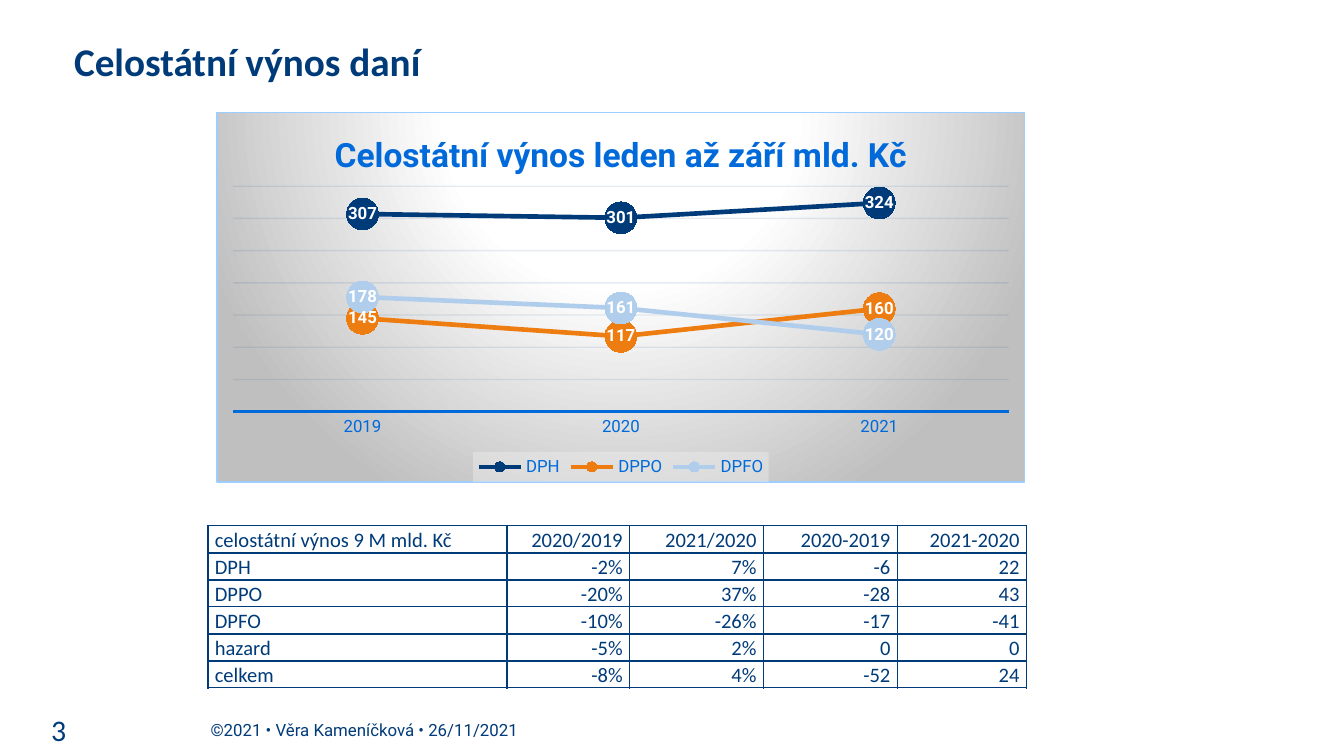
from lxml import etree
from pptx import Presentation
from pptx.chart.data import CategoryChartData
from pptx.dml.color import RGBColor
from pptx.enum.chart import (XL_CHART_TYPE as ChartType, XL_LABEL_POSITION as LabelPos,
                             XL_LEGEND_POSITION as LegendPos, XL_MARKER_STYLE as Marker,
                             XL_TICK_LABEL_POSITION as TickLabel, XL_TICK_MARK as Tick)
from pptx.enum.text import MSO_ANCHOR as Anchor, PP_ALIGN as Align
from pptx.oxml import parse_xml
from pptx.oxml.ns import nsdecls, qn
from pptx.util import Cm, Pt

NAVY = RGBColor(0x00, 0x3B, 0x79)
FOOTER = RGBColor(0x01, 0x3B, 0x79)
BLUE = RGBColor(0x00, 0x6A, 0xDA)
GRID = RGBColor(0x00, 0x44, 0x8C)
ORANGE = RGBColor(0xEE, 0x7D, 0x11)
PALE = RGBColor(0xB0, 0xCE, 0xEC)
BORDER = RGBColor(0x9E, 0xCD, 0xFF)
WHITE = RGBColor(0xFF, 0xFF, 0xFF)
GREY = RGBColor(0xBF, 0xBF, 0xBF)
LEGEND = RGBColor(0xF2, 0xF2, 0xF2)

YEARS = ["2019", "2020", "2021"]
TAXES = [("DPH", (307, 301, 324), NAVY),
         ("DPPO", (145, 117, 160), ORANGE),
         ("DPFO", (178, 161, 120), PALE)]
ROWS = [("celostátní výnos 9 M mld. Kč", "2020/2019", "2021/2020", "2020-2019", "2021-2020"),
        ("DPH", "-2%", "7%", "-6", "22"),
        ("DPPO", "-20%", "37%", "-28", "43"),
        ("DPFO", "-10%", "-26%", "-17", "-41"),
        ("hazard", "-5%", "2%", "0", "0"),
        ("celkem", "-8%", "4%", "-52", "24")]
COL_WIDTHS = (5.65, 2.32, 2.53, 2.53, 2.44)
ROW_HEIGHT = 0.51


def set_font(font, size, color, name="Roboto", bold=False):
    font.size, font.name, font.bold = Pt(size), name, bold
    font.color.rgb = color


def add_text(slide, text, box, size, color, name, bold=False,
             align=Align.LEFT, anchor=Anchor.MIDDLE, inset=0.25):
    tf = slide.shapes.add_textbox(*map(Cm, box)).text_frame
    tf.word_wrap = True
    tf.vertical_anchor = anchor
    tf.margin_left = tf.margin_right = Cm(inset)
    tf.margin_top = tf.margin_bottom = Cm(0.13)
    tf.text = text
    p = tf.paragraphs[0]
    p.alignment = align
    set_font(p.runs[0].font, size, color, name, bold)


def solid(color, alpha):
    return (f'<a:solidFill><a:srgbClr val="{color}"><a:alpha val="{alpha * 1000}"/>'
            '</a:srgbClr></a:solidFill>')


def style_chart_area(chart):
    """Radial gradient with a thin border behind the whole chart."""
    stops = "".join(f'<a:gs pos="{pos * 1000}"><a:srgbClr val="{color}"/></a:gs>'
                    for pos, color in ((0, WHITE), (39, WHITE), (100, GREY)))
    sp_pr = parse_xml(
        f'<c:spPr {nsdecls("c", "a")}><a:gradFill><a:gsLst>{stops}</a:gsLst>'
        '<a:path path="circle"><a:fillToRect l="50000" t="-80000" r="50000" b="180000"/>'
        f'</a:path></a:gradFill><a:ln w="{Pt(0.75)}"><a:solidFill>'
        f'<a:srgbClr val="{BORDER}"/></a:solidFill></a:ln></c:spPr>')
    chart.element.find(qn("c:txPr")).addprevious(sp_pr)


def place_plot(chart, x, y, w, h):
    plot_area = chart.element.find(".//" + qn("c:plotArea"))
    for old in plot_area.findall(qn("c:layout")):
        plot_area.remove(old)
    plot_area.insert(0, parse_xml(
        f'<c:layout {nsdecls("c")}><c:manualLayout><c:layoutTarget val="inner"/>'
        '<c:xMode val="edge"/><c:yMode val="edge"/>'
        f'<c:x val="{x}"/><c:y val="{y}"/><c:w val="{w}"/><c:h val="{h}"/>'
        '</c:manualLayout></c:layout>'))


def style_axes(chart):
    years = chart.category_axis
    years.major_tick_mark = years.minor_tick_mark = Tick.NONE
    years.tick_label_position = TickLabel.NEXT_TO_AXIS
    years.format.line.color.rgb = BLUE
    years.format.line.width = Pt(1.5)
    set_font(years.tick_labels.font, 9, BLUE)

    values = chart.value_axis
    values.minimum_scale, values.maximum_scale, values.major_unit = 0, 350, 50
    values.has_major_gridlines = True
    line = values.major_gridlines.format.line
    line.color.rgb = GRID
    line.width = Pt(0.75)
    color = values.major_gridlines._xAx.find(".//" + qn("c:majorGridlines")
                                             + "//" + qn("a:srgbClr"))
    etree.SubElement(color, qn("a:alpha")).set("val", "10000")
    values.visible = False


def style_series(series, color):
    series.smooth = False
    series.format.line.color.rgb = color
    series.format.line.width = Pt(2.5)
    marker = series.marker
    marker.style, marker.size = Marker.CIRCLE, 17
    marker.format.fill.solid()
    marker.format.fill.fore_color.rgb = color
    marker.format.line.color.rgb = color
    labels = series.data_labels
    labels.show_value = True
    labels.position = LabelPos.CENTER
    labels.number_format, labels.number_format_is_linked = "#,##0", False
    set_font(labels.font, 9, WHITE, bold=True)


def add_tax_chart(slide, box):
    data = CategoryChartData(number_format="#,##0")
    data.categories = YEARS
    for name, values, _ in TAXES:
        data.add_series(name, values)
    chart = slide.shapes.add_chart(ChartType.LINE_MARKERS, *map(Cm, box), data).chart
    set_font(chart.font, 10, NAVY)
    chart.plots[0].vary_by_categories = False
    style_chart_area(chart)
    place_plot(chart, 0.02, 0.2, 0.96, 0.61)
    style_axes(chart)
    for series, (_, _, color) in zip(chart.plots[0].series, TAXES):
        style_series(series, color)

    # Title and legend
    chart.has_title = True
    tf = chart.chart_title.text_frame
    tf.text = "Celostátní výnos leden až září mld. Kč"
    set_font(tf.paragraphs[0].runs[0].font, 18, BLUE, bold=True)
    chart.has_legend = True
    legend = chart.legend
    legend.position, legend.include_in_layout = LegendPos.BOTTOM, False
    set_font(legend.font, 9, BLUE)
    legend._element.find(qn("c:txPr")).addprevious(
        parse_xml(f'<c:spPr {nsdecls("c", "a")}>{solid(LEGEND, 39)}</c:spPr>'))


def set_borders(cell):
    tc_pr = cell._tc.get_or_add_tcPr()
    for i, side in enumerate(("lnL", "lnR", "lnT", "lnB")):
        tc_pr.insert(i, parse_xml(f'<a:{side} {nsdecls("a")} w="{Pt(1)}"><a:solidFill>'
                                  f'<a:srgbClr val="{NAVY}"/></a:solidFill></a:{side}>'))


def fill_cell(cell, text, align):
    cell.fill.background()
    set_borders(cell)
    cell.vertical_anchor = Anchor.BOTTOM
    cell.margin_left = cell.margin_right = Cm(0.13)
    cell.margin_top = cell.margin_bottom = 0
    cell.text = text
    p = cell.text_frame.paragraphs[0]
    p.alignment, p.line_spacing = align, 1.07
    set_font(p.runs[0].font, 11, NAVY, "Calibri")


def add_tax_table(slide, left, top):
    table = slide.shapes.add_table(len(ROWS), len(COL_WIDTHS), Cm(left), Cm(top),
                                   Cm(sum(COL_WIDTHS)), Cm(ROW_HEIGHT * len(ROWS))).table
    table.first_row = table.horz_banding = False
    for col, width in zip(table.columns, COL_WIDTHS):
        col.width = Cm(width)
    for r, texts in enumerate(ROWS):
        table.rows[r].height = Cm(ROW_HEIGHT)
        for c, text in enumerate(texts):
            fill_cell(table.cell(r, c), text, Align.RIGHT if c else Align.LEFT)


def main():
    prs = Presentation()
    prs.slide_width, prs.slide_height = Cm(25.4), Cm(14.28)
    slide = prs.slides.add_slide(prs.slide_layouts[6])

    # Heading
    add_text(slide, "Celostátní výnos daní", (1.27, 0.58, 22.86, 1.12), 21, NAVY,
             "Calibri", bold=True, anchor=Anchor.TOP, inset=0.13)
    # Footer and slide number
    add_text(slide, "©2021 • Věra Kameníčková • 26/11/2021", (3.73, 13.41, 8.59, 0.76),
             9, FOOTER, "Roboto")
    add_text(slide, "3", (-0.18, 13.41, 1.68, 0.76), 16, FOOTER, "Calibri",
             align=Align.RIGHT)
    # Tax revenue
    add_tax_table(slide, 3.93, 9.93)
    add_tax_chart(slide, (4.09, 2.11, 15.29, 7.01))
    prs.save("out.pptx")


if __name__ == "__main__":
    main()
